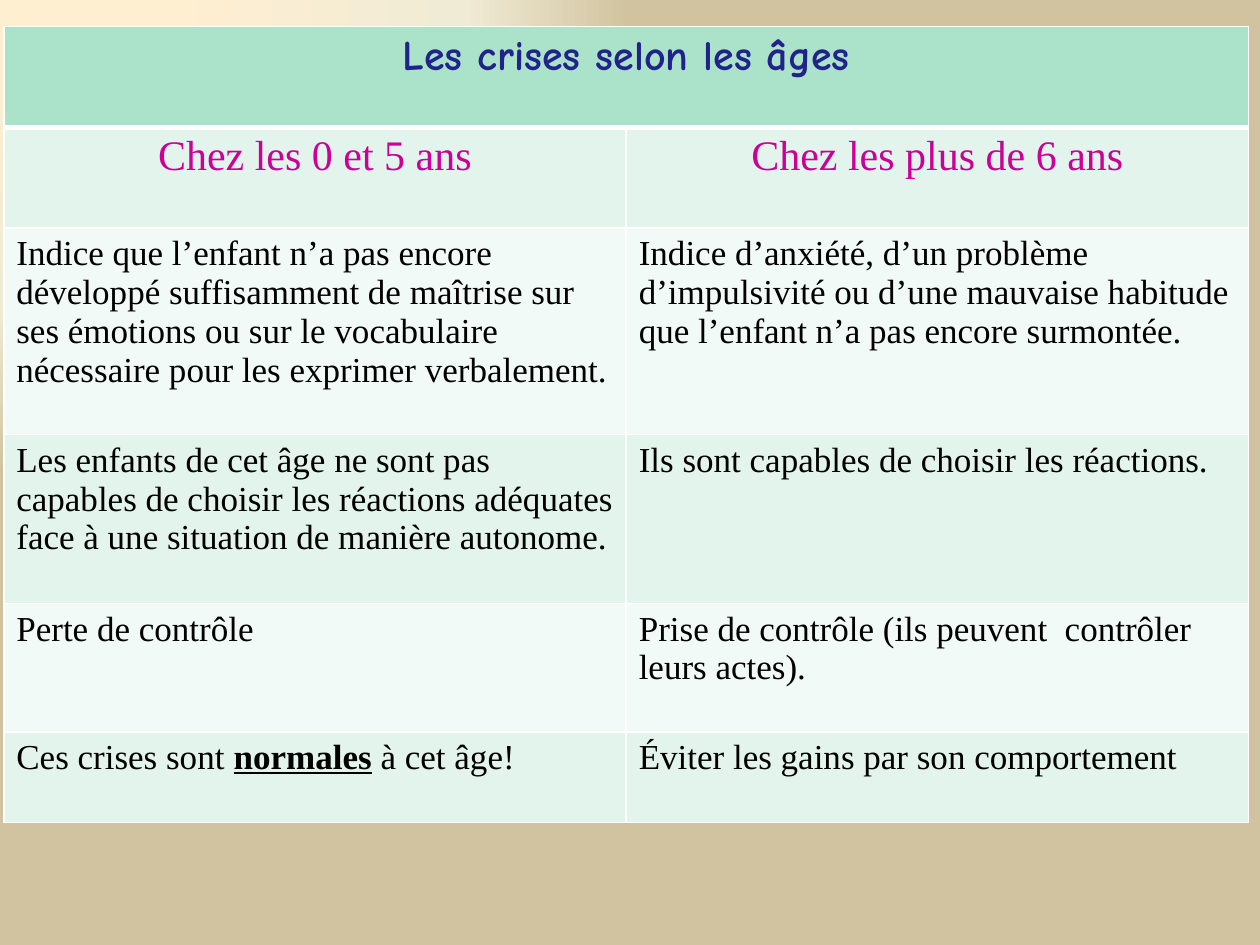
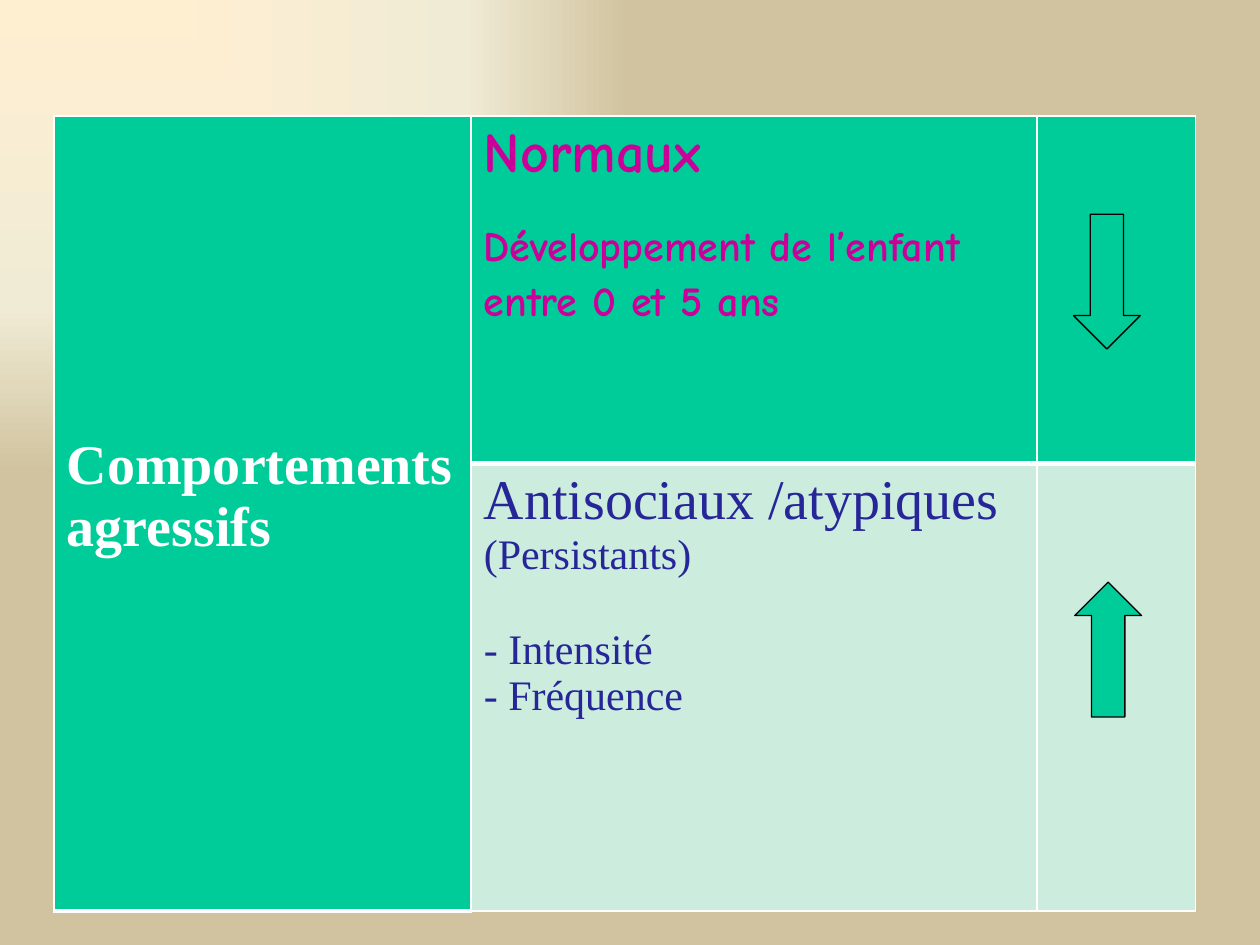
from pptx import Presentation
from pptx.dml.color import RGBColor
from pptx.enum.shapes import MSO_SHAPE
from pptx.enum.text import MSO_ANCHOR, PP_ALIGN
from pptx.oxml import parse_xml
from pptx.oxml.ns import nsdecls
from pptx.util import Inches, Pt

HUES = {"green": "00CC99", "mint": "AAE2CA", "pale": "E2F4EC", "faint": "F1FAF6",
        "soft": "CCECDE", "navy": "22228B", "blue": "262699", "pink": "CC0099",
        "white": "FFFFFF", "black": "000000"}
GLOW = [(0, "FFEFD1"), (65, "F0EBD5"), (100, "D1C39F")]
COMIC, ROMAN = "Comic Neue", "Times New Roman"

# font, size, colour, bold
STYLES = {
    "title": (COMIC, 24, "navy", True),
    "head": (ROMAN, 24, "pink", False),
    "body": (ROMAN, 20, "black", False),
    "topic": (ROMAN, 32, "white", True),
    "normal": (COMIC, 32, "pink", True),
    "detail": (COMIC, 24, "pink", True),
    "odd": (ROMAN, 32, "blue", False),
    "sign": (ROMAN, 24, "blue", False),
}
CENTRED = ("title", "head")

# Stars enclose words in bold and underlined
AGES = [
    ("Chez les 0 et 5 ans", "Chez les plus de 6 ans"),
    ("Indice que l’enfant n’a pas encore développé suffisamment de maîtrise sur "
     "ses émotions ou sur le vocabulaire nécessaire pour les exprimer verbalement.",
     "Indice d’anxiété, d’un problème d’impulsivité ou d’une mauvaise habitude "
     "que l’enfant n’a pas encore surmontée."),
    ("Les enfants de cet âge ne sont pas capables de choisir les réactions "
     "adéquates face à une situation de manière autonome.",
     "Ils sont capables de choisir les réactions."),
    ("Perte de contrôle", "Prise de contrôle (ils peuvent  contrôler leurs actes)."),
    ("Ces crises sont *normales* à cet âge!", "Éviter les gains par son comportement"),
]
AGE_ROWS = [0.8, 0.8, 1.64, 1.34, 1.02, 0.72]

# text, style, space before in points
TOPIC = [("Comportements agressifs", "topic", 0)]
NORMAL = [("Normaux", "normal", 0),
          ("Développement de l’enfant entre 0 et 5 ans", "detail", 17)]
ODD = [("Antisociaux /atypiques", "odd", 0), ("(Persistants)", "sign", 0),
       ("- Intensité", "sign", 27.6), ("- Fréquence", "sign", 0)]
ARROWS = [(8.52, 1.7, 0), (8.53, 4.62, 180)]


def tint(name):
    return RGBColor.from_string(HUES[name])


def paint(layout):
    """Give the layout a glow from the top left corner."""
    stops = "".join(f'<a:gs pos="{at * 1000}"><a:srgbClr val="{hue}"/></a:gs>'
                    for at, hue in GLOW)
    layout.element.cSld.insert(0, parse_xml(
        f'<p:bg {nsdecls("p", "a")}><p:bgPr><a:gradFill rotWithShape="0">'
        f'<a:gsLst>{stops}</a:gsLst><a:path path="rect">'
        '<a:fillToRect r="100000" b="100000"/></a:path></a:gradFill>'
        '<a:effectLst/></p:bgPr></p:bg>'))


def edge(cell, row):
    """Rule the cell in white, thicker between the first two rows."""
    wide = {"T": 3 if row == 1 else 1, "B": 3 if row == 0 else 1}
    for side in "LRTB":
        cell._tc.get_or_add_tcPr().append(parse_xml(
            f'<a:ln{side} {nsdecls("a")} w="{Pt(wide.get(side, 1))}"><a:solidFill>'
            f'<a:srgbClr val="{HUES["white"]}"/></a:solidFill></a:ln{side}>'))


def write(cell, lines):
    frame = cell.text_frame
    for i, (text, style, gap) in enumerate(lines):
        para = frame.add_paragraph() if i else frame.paragraphs[0]
        para.space_before = Pt(gap)
        if style in CENTRED:
            para.alignment = PP_ALIGN.CENTER
        if style == "detail":
            para.line_spacing = 1.14
        face, size, hue, bold = STYLES[style]
        for j, part in enumerate(text.split("*")):
            run = para.add_run()
            run.text = part
            font = run.font
            font.name, font.size = face, Pt(size)
            font.color.rgb = tint(hue)
            font.bold = bold or j % 2 == 1
            font.underline = j % 2 == 1


def grid(slide, left, top, cols, rows, span, cells):
    """Add a table; cells maps (row, column) to a fill and its lines."""
    table = slide.shapes.add_table(
        len(rows), len(cols), Inches(left), Inches(top),
        Inches(sum(cols)), Inches(sum(rows))).table
    for col, size in zip(table.columns, cols):
        col.width = Inches(size)
    for row, size in zip(table.rows, rows):
        row.height = Inches(size)
    table.cell(0, 0).merge(table.cell(*span))
    for (row, col), (hue, lines) in cells.items():
        cell = table.cell(row, col)
        edge(cell, row)
        cell.fill.solid()
        cell.fill.fore_color.rgb = tint(hue)
        write(cell, lines)
    return table


def ages(slide):
    cells = {(0, 0): ("mint", [("Les crises selon les âges", "title", 0)])}
    for r, pair in enumerate(AGES, 1):
        for c, text in enumerate(pair):
            cells[r, c] = ("pale" if r % 2 else "faint",
                           [(text, "head" if r == 1 else "body", 0)])
    grid(slide, 0.03, 0.21, [4.94] * 2, AGE_ROWS, (0, 1), cells)


def acts(slide):
    cells = {(0, 0): ("green", TOPIC), (0, 1): ("green", NORMAL), (0, 2): ("green", []),
             (1, 1): ("soft", ODD), (1, 2): ("soft", [])}
    table = grid(slide, 0.43, 0.92, [3.31, 4.49, 1.26], [2.76, 3.55], (1, 0), cells)
    topic = table.cell(0, 0)
    topic.vertical_anchor = MSO_ANCHOR.MIDDLE
    topic.margin_bottom = Inches(0.32)
    for left, top, turn in ARROWS:
        arrow = slide.shapes.add_shape(MSO_SHAPE.DOWN_ARROW, Inches(left), Inches(top),
                                       Inches(0.53), Inches(1.07))
        arrow.rotation = turn
        arrow.shadow.inherit = False
        arrow.fill.solid()
        arrow.fill.fore_color.rgb = tint("green")
        arrow.line.color.rgb = tint("black")
        arrow.line.width = Pt(0.75)


def main():
    deck = Presentation()
    deck.slide_width, deck.slide_height = Inches(10), Inches(7.5)
    blank = deck.slide_layouts[6]
    paint(blank)
    for build in (ages, acts):
        build(deck.slides.add_slide(blank))
    deck.save("out.pptx")


if __name__ == "__main__":
    main()
